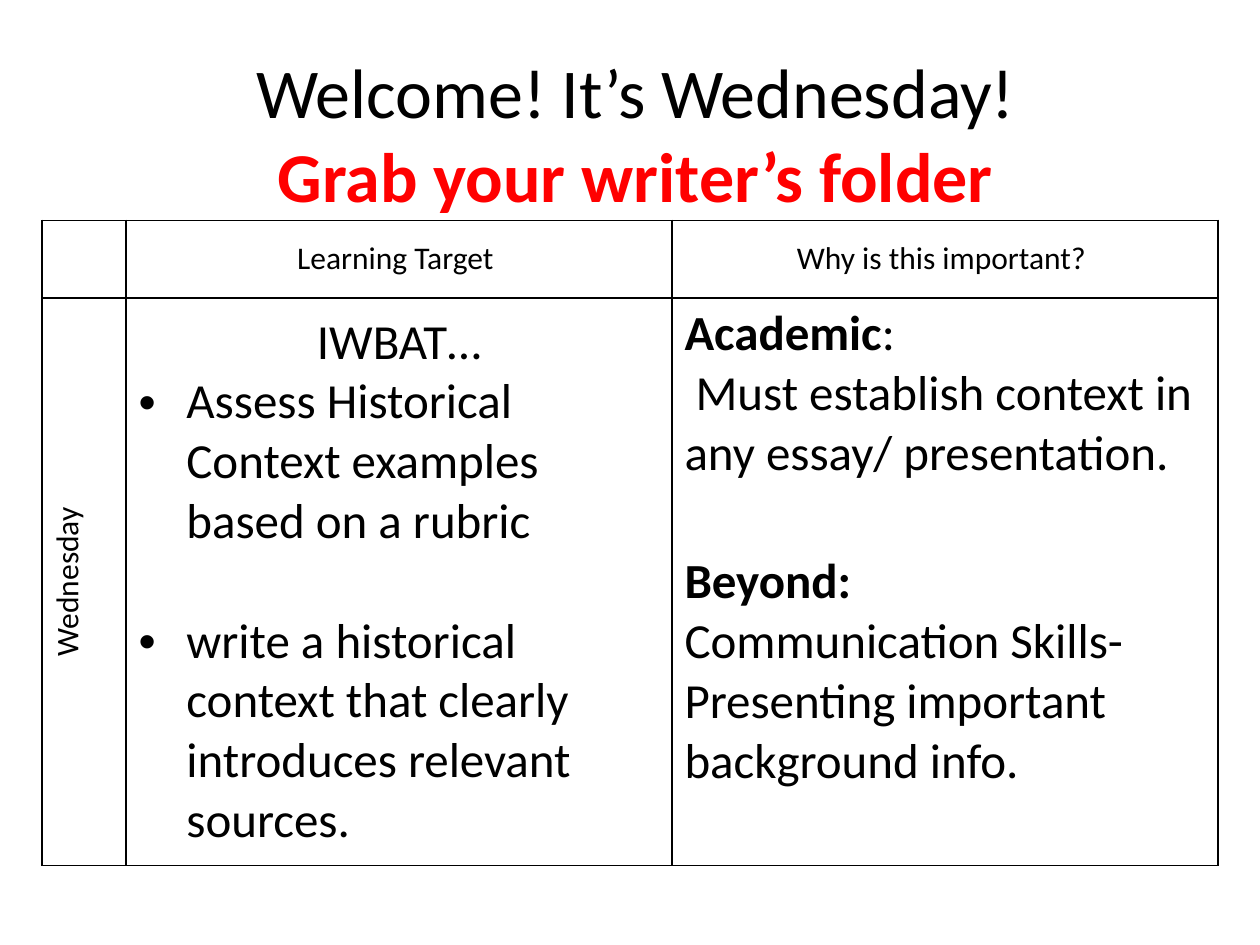
from lxml.etree import SubElement
from pptx import Presentation
from pptx.dml.color import RGBColor
from pptx.enum.text import MSO_ANCHOR, PP_ALIGN
from pptx.oxml.ns import qn
from pptx.util import Inches, Pt

COLORS = {"ink": "000000", "alert": "FF0000", "paper": "FFFFFF"}
FONT = "Calibri"
SLIDE_W, SLIDE_H = Inches(10), Inches(7.5)
COLUMN_SHARES = (1 / 14, 6.5 / 14, 6.5 / 14)
ROW_SHARES = (0.12, 0.88)
BULLET_INDENT = Inches(0.38)


def share_box(left, top, width, height):
    """Turn shares of the slide's size into lengths."""
    return (int(left * SLIDE_W), int(top * SLIDE_H),
            int(width * SLIDE_W), int(height * SLIDE_H))


def write(frame, runs, size=28, color="ink", align=PP_ALIGN.LEFT,
          gap=0, bullet=False):
    """Add a paragraph of (text, bold) runs, using the empty first one if free."""
    first = frame.paragraphs[0]
    paragraph = frame.add_paragraph() if first.runs else first
    paragraph.alignment = align
    paragraph.space_before = Pt(gap)
    if bullet:
        properties = paragraph._p.get_or_add_pPr()
        properties.set("marL", str(BULLET_INDENT))
        properties.set("indent", str(-BULLET_INDENT))
        SubElement(properties, qn("a:buFont")).set("typeface", "Arial")
        SubElement(properties, qn("a:buChar")).set("char", "•")
    for text, bold in runs:
        run = paragraph.add_run()
        run.text = text
        run.font.name = FONT
        run.font.size = Pt(size)
        run.font.bold = bold
        run.font.color.rgb = RGBColor.from_string(COLORS[color])


def style_cell(cell, anchor):
    properties = cell._tc.get_or_add_tcPr()
    for side in ("lnL", "lnR", "lnT", "lnB"):
        line = SubElement(properties, qn(f"a:{side}"), w=str(Pt(1)))
        fill = SubElement(line, qn("a:solidFill"))
        SubElement(fill, qn("a:srgbClr"), val=COLORS["ink"])
    cell.fill.solid()
    cell.fill.fore_color.rgb = RGBColor.from_string(COLORS["paper"])
    cell.vertical_anchor = anchor


def add_greeting(slide, box):
    frame = slide.shapes.add_textbox(*box).text_frame
    frame.word_wrap = True
    write(frame, [("Welcome! It’s Wednesday!", False)], size=40,
          align=PP_ALIGN.CENTER)
    write(frame, [("Grab your writer’s folder", True)], size=40,
          color="alert", align=PP_ALIGN.CENTER)


def add_targets_table(slide, box):
    table = slide.shapes.add_table(2, 3, *box).table
    table.first_row = table.horz_banding = False
    for column, share in zip(table.columns, COLUMN_SHARES):
        column.width = int(share * box[2])
    for row, share in zip(table.rows, ROW_SHARES):
        row.height = int(share * box[3])
    for cell in table.iter_cells():
        style_cell(cell, MSO_ANCHOR.MIDDLE)

    day, target, reasons = (table.cell(1, column) for column in range(3))
    day._tc.get_or_add_tcPr().set("vert", "vert270")
    reasons.vertical_anchor = MSO_ANCHOR.TOP
    labels = ((table.cell(0, 1), "Learning Target "),
              (table.cell(0, 2), "Why is this important? "),
              (day, "Wednesday"))
    for cell, label in labels:
        write(cell.text_frame, [(label, False)], size=18,
              align=PP_ALIGN.CENTER)

    goals = target.text_frame
    write(goals, [("IWBAT…", False)], align=PP_ALIGN.CENTER)
    write(goals, [("Assess Historical Context examples based on a rubric",
                   False)], bullet=True)
    write(goals, [("write a historical context that clearly introduces "
                   "relevant sources.", False)], bullet=True, gap=34)

    why = reasons.text_frame
    write(why, [("Academic", True), (":", False)])
    write(why, [(" Must establish context in any essay/ presentation.", False)])
    write(why, [("Beyond:", True)], gap=39)
    write(why, [("Communication Skills- Presenting important background info.",
                 False)])


def main():
    deck = Presentation()
    deck.slide_width, deck.slide_height = SLIDE_W, SLIDE_H
    slide = deck.slides.add_slide(deck.slide_layouts[6])
    add_targets_table(slide, share_box(1 / 30, 0.2333, 28 / 30, 0.6827))
    add_greeting(slide, share_box(1 / 12, 0.0444, 0.842, 0.1933))
    deck.save("out.pptx")


if __name__ == "__main__":
    main()
